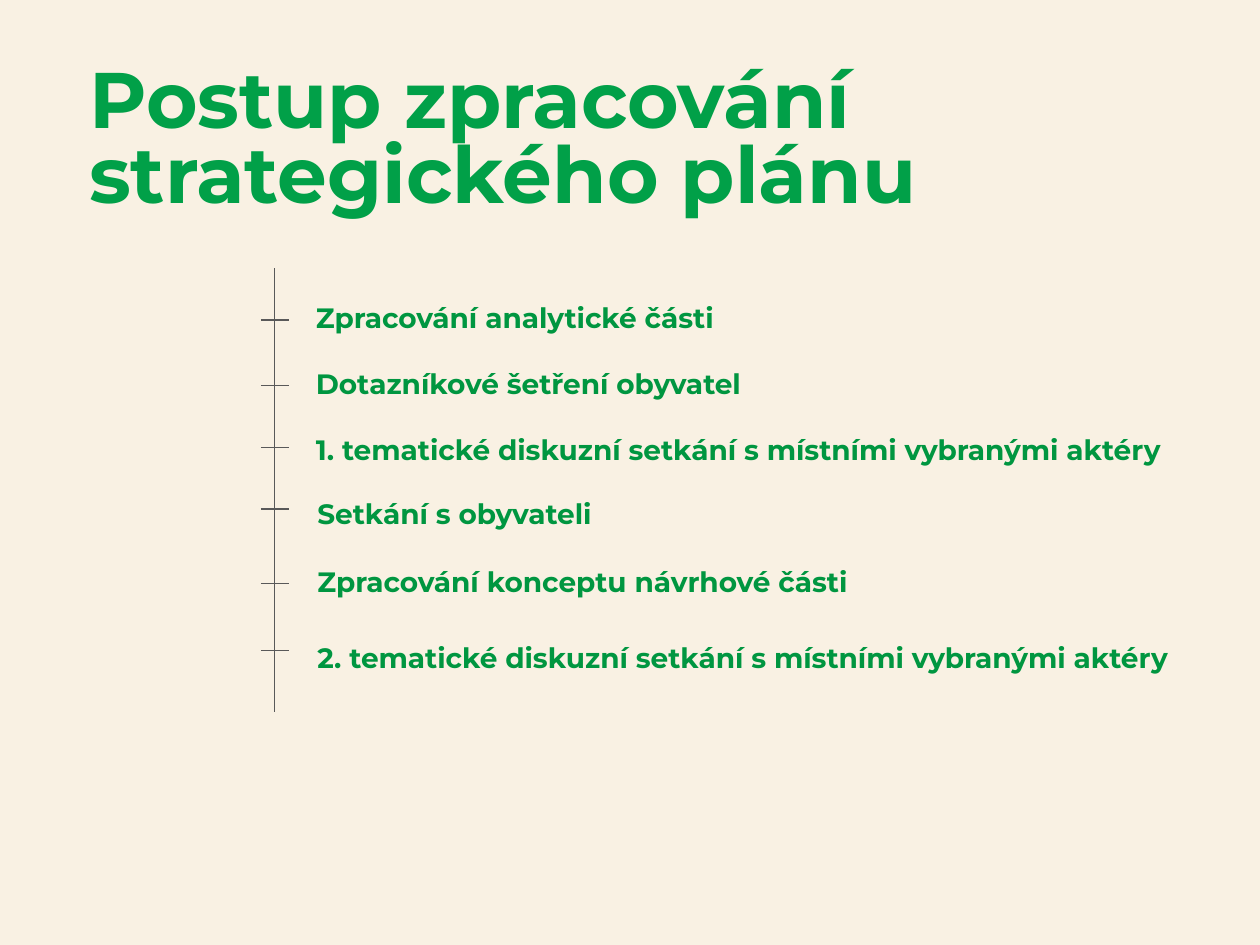
from lxml import etree
from pptx import Presentation
from pptx.dml.color import RGBColor
from pptx.enum.shapes import MSO_CONNECTOR
from pptx.enum.text import MSO_ANCHOR, PP_ALIGN
from pptx.oxml.ns import qn
from pptx.util import Cm, Pt

LINE = MSO_CONNECTOR.STRAIGHT
TOP, MIDDLE = MSO_ANCHOR.TOP, MSO_ANCHOR.MIDDLE
LEFT = PP_ALIGN.LEFT

# Content
TITLE = "Postup zpracování strategického plánu"
# text, tick height, box (left, top, width, height) in cm, line spacing
STEPS = [
    ("Zpracování analytické části", 6.45, (6.12, 5.94, 11.61, 1.3), 1.0),
    ("Dotazníkové šetření obyvatel", 7.77, (6.12, 7.26, 11.61, 1.3), 1.0),
    ("1. tematické diskuzní setkání s místními vybranými aktéry", 9.02,
     (6.12, 8.59, 17.86, 2.34), 1.0),
    ("Setkání s obyvateli", 10.26, (6.15, 9.65, 18.34, 1.78), 1.35),
    ("Zpracování konceptu návrhové části", 11.76, (6.15, 11.25, 16.03, 1.3), 1.0),
    ("2. tematické diskuzní setkání s místními vybranými aktéry", 13.11,
     (6.15, 12.55, 17.98, 1.78), 1.35),
]
COLORS = {"back": "F9F1E3", "title": "01A048", "step": "009640", "line": "595959"}
FONT = "Montserrat"
AXIS, START, END = 5.54, 5.41, 14.35
HALF = 0.28  # half a tick


def color(key):
    return RGBColor.from_string(COLORS[key])


def add_text(slide, text, box, size, key, space, anchor=TOP):
    frame = slide.shapes.add_textbox(*map(Cm, box)).text_frame
    frame.word_wrap = True
    frame.vertical_anchor = anchor
    para = frame.paragraphs[0]
    para.text = text
    para.alignment = LEFT
    para.line_spacing = space
    font = para.font
    font.name, font.size, font.bold = FONT, Pt(size), True
    font.color.rgb = color(key)


def add_line(slide, *ends):
    line = slide.shapes.add_connector(LINE, *map(Cm, ends))
    line.line.color.rgb = color("line")
    line.line.width = Pt(0.75)
    etree.SubElement(line._element.spPr, qn("a:effectLst"))


def main():
    deck = Presentation()
    deck.slide_width, deck.slide_height = Cm(25.4), Cm(19.05)
    slide = deck.slides.add_slide(deck.slide_layouts[6])
    fill = slide.background.fill
    fill.solid()
    fill.fore_color.rgb = color("back")

    # Title
    add_text(slide, TITLE, (1.55, 0.86, 19.96, 4.06), 45, "title", 0.8, MIDDLE)

    # Timeline with one tick per step
    add_line(slide, AXIS, START, AXIS, END)
    for text, tick, box, space in STEPS:
        add_text(slide, text, box, 16, "step", space)
        add_line(slide, AXIS - HALF, tick, AXIS + HALF, tick)

    deck.save("out.pptx")


if __name__ == "__main__":
    main()
